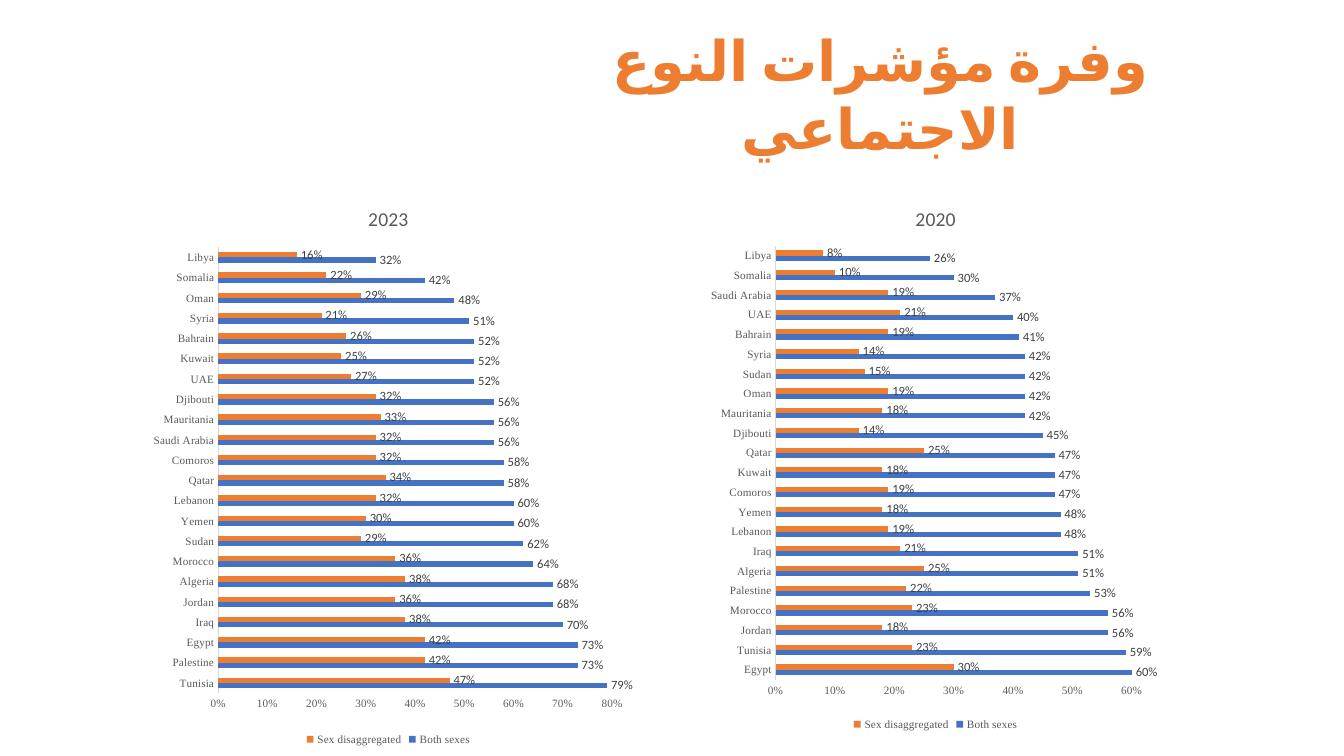
from lxml.etree import SubElement
from pptx import Presentation
from pptx.chart.data import CategoryChartData
from pptx.dml.color import RGBColor
from pptx.enum.chart import XL_CHART_TYPE as ChartType
from pptx.enum.chart import XL_LABEL_POSITION as LabelPosition
from pptx.enum.chart import XL_LEGEND_POSITION as LegendPosition
from pptx.enum.chart import XL_TICK_MARK as TickMark
from pptx.enum.text import MSO_AUTO_SIZE as AutoSize
from pptx.enum.text import PP_ALIGN as Align
from pptx.oxml import parse_xml
from pptx.oxml.ns import nsdecls, qn
from pptx.util import Cm, Pt

ORANGE = RGBColor(0xED, 0x7D, 0x31)
BLUE = RGBColor(0x44, 0x72, 0xC4)
GRAY = RGBColor(0x59, 0x59, 0x59)
DARK = RGBColor(0x40, 0x40, 0x40)
BLACK = RGBColor(0, 0, 0)
PALE = RGBColor(0xD9, 0xD9, 0xD9)
SANS, SERIF = "Calibri", "Times New Roman"

HEADING = "وفرة مؤشرات النوع الاجتماعي"
SERIES = [("Both sexes", BLUE), ("Sex disaggregated", ORANGE)]

# country, both sexes %, sex disaggregated %
ROWS_2020 = [
    ("Egypt", 60, 30), ("Tunisia", 59, 23), ("Jordan", 56, 18), ("Morocco", 56, 23),
    ("Palestine", 53, 22), ("Algeria", 51, 25), ("Iraq", 51, 21), ("Lebanon", 48, 19),
    ("Yemen", 48, 18), ("Comoros", 47, 19), ("Kuwait", 47, 18), ("Qatar", 47, 25),
    ("Djibouti", 45, 14), ("Mauritania", 42, 18), ("Oman", 42, 19), ("Sudan", 42, 15),
    ("Syria", 42, 14), ("Bahrain", 41, 19), ("UAE", 40, 21), ("Saudi Arabia", 37, 19),
    ("Somalia", 30, 10), ("Libya", 26, 8),
]
ROWS_2023 = [
    ("Tunisia", 79, 47), ("Palestine", 73, 42), ("Egypt", 73, 42), ("Iraq", 70, 38),
    ("Jordan", 68, 36), ("Algeria", 68, 38), ("Morocco", 64, 36), ("Sudan", 62, 29),
    ("Yemen", 60, 30), ("Lebanon", 60, 32), ("Qatar", 58, 34), ("Comoros", 58, 32),
    ("Saudi Arabia", 56, 32), ("Mauritania", 56, 33), ("Djibouti", 56, 32), ("UAE", 52, 27),
    ("Kuwait", 52, 25), ("Bahrain", 52, 26), ("Syria", 51, 21), ("Oman", 48, 29),
    ("Somalia", 42, 22), ("Libya", 32, 16),
]
# title, rows, axis maximum, frame in cm, plot area as fractions of the frame
CHARTS = [
    ("2020", ROWS_2020, 0.65, (17.65, 4.67, 11.86, 13.84), (0.16, 0.11, 0.82, 0.79)),
    ("2023", ROWS_2023, 0.8, (3.66, 4.67, 12.29, 14.22), (0.15, 0.11, 0.81, 0.79)),
]


def set_font(font, size, color, name=SANS, bold=False):
    font.size, font.name, font.bold = Pt(size), name, bold
    font.color.rgb = color


def add_text(frame, text, align=Align.CENTER, rtl=False, **font_format):
    paragraph = frame.paragraphs[0]
    paragraph.alignment = align
    run = paragraph.add_run()
    run.text = text
    set_font(run.font, **font_format)
    if rtl:
        paragraph._p.get_or_add_pPr().set("rtl", "1")
        properties = run._r.get_or_add_rPr()
        properties.set("lang", "ar-SA")
        SubElement(properties, qn("a:cs")).set("typeface", SANS)


def place_plot(chart, fractions):
    """Fix the inner plot area, which python-pptx cannot position."""
    values = "".join(
        f'<c:{tag} val="{value}"/>' for tag, value in zip("xywh", fractions))
    layout = parse_xml(
        f'<c:layout {nsdecls("c")}><c:manualLayout><c:layoutTarget val="inner"/>'
        f'<c:xMode val="edge"/><c:yMode val="edge"/>{values}'
        "</c:manualLayout></c:layout>")
    plot_area = chart._chartSpace.chart.plotArea
    for old in plot_area.findall(qn("c:layout")):
        plot_area.remove(old)
    plot_area.insert(0, layout)


def style_axes(chart, maximum):
    for axis in (chart.category_axis, chart.value_axis):
        axis.major_tick_mark = axis.minor_tick_mark = TickMark.NONE
        axis.has_major_gridlines = False
        set_font(axis.tick_labels.font, 8, GRAY, SERIF)
    category_line = chart.category_axis.format.line
    category_line.color.rgb, category_line.width = PALE, Pt(0.75)
    value_axis = chart.value_axis
    value_axis.format.line.fill.background()
    value_axis.minimum_scale, value_axis.maximum_scale = 0, maximum
    value_axis.major_unit = 0.1
    value_axis.tick_labels.number_format = "0%"
    value_axis.tick_labels.number_format_is_linked = False


def style_bars(plot):
    plot.gap_width, plot.overlap = 182, 0
    plot.vary_by_categories = False
    for series, (_, color) in zip(plot.series, SERIES):
        series.format.fill.solid()
        series.format.fill.fore_color.rgb = color
        series.invert_if_negative = False
        labels = series.data_labels
        labels.show_value = True
        labels.position = LabelPosition.OUTSIDE_END
        labels.number_format, labels.number_format_is_linked = "0%", False
        set_font(labels.font, 9, DARK)


def add_bar_chart(slide, title, rows, maximum, frame, fractions):
    data = CategoryChartData(number_format="0%")
    data.categories = [row[0] for row in rows]
    for column, (name, _) in enumerate(SERIES, start=1):
        data.add_series(name, [row[column] / 100 for row in rows])
    chart = slide.shapes.add_chart(
        ChartType.BAR_CLUSTERED, *map(Cm, frame), data).chart
    set_font(chart.font, 10, BLACK)
    add_text(chart.chart_title.text_frame, title, size=14, color=GRAY)
    chart.chart_title.include_in_layout = False
    chart.has_legend = True
    chart.legend.position = LegendPosition.BOTTOM
    chart.legend.include_in_layout = False
    set_font(chart.legend.font, 8, GRAY, SERIF)
    style_axes(chart, maximum)
    style_bars(chart.plots[0])
    place_plot(chart, fractions)


def main():
    presentation = Presentation()
    presentation.slide_width, presentation.slide_height = Cm(33.87), Cm(19.05)
    slide = presentation.slides.add_slide(presentation.slide_layouts[6])
    for chart in CHARTS:
        add_bar_chart(slide, *chart)
    heading = slide.shapes.add_textbox(Cm(13.49), Cm(0.53), Cm(17.4), Cm(1.96))
    heading.text_frame.word_wrap = True
    heading.text_frame.auto_size = AutoSize.SHAPE_TO_FIT_TEXT
    add_text(heading.text_frame, HEADING, rtl=True, size=40, color=ORANGE, bold=True)
    presentation.save("out.pptx")


if __name__ == "__main__":
    main()
